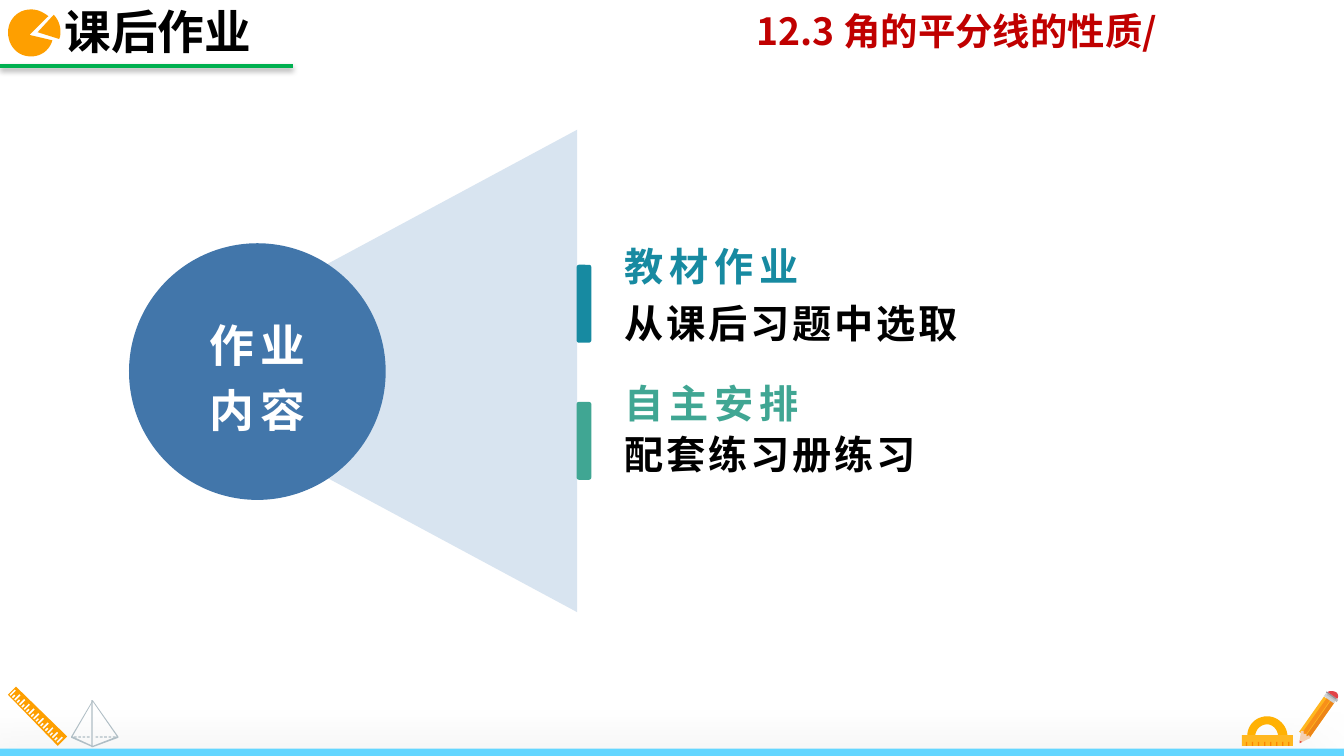
from dataclasses import dataclass

from lxml.etree import SubElement
from pptx import Presentation
from pptx.dml.color import RGBColor
from pptx.enum.shapes import MSO_CONNECTOR as CONN, MSO_SHAPE as SHAPE
from pptx.enum.text import MSO_ANCHOR as ANCHOR, MSO_AUTO_SIZE as AUTO, PP_ALIGN as ALIGN
from pptx.oxml.ns import qn
from pptx.util import Inches, Pt


@dataclass(frozen=True)
class Theme:
    sans: str = "Noto Sans CJK SC"
    serif: str = "Times New Roman"
    title_size: int = 25
    circle_size: int = 24
    item_size: int = 21
    header_size: int = 20
    black: str = "000000"
    white: str = "FFFFFF"
    red: str = "C00000"
    green: str = "00B050"
    sky: str = "63D6FF"
    blue: str = "4276AA"
    pale: str = "D8E4F0"
    teal: str = "178AA1"
    mint: str = "40A693"
    orange: str = "FE9F00"
    amber: str = "FFB720"
    arc: str = "FFB103"
    tick: str = "FB8501"
    grey: str = "B0BEC5"
    lead: str = "E74C3C"
    eraser: str = "E24348"
    wood: str = "F4CFB2"


T = Theme()


def paint(shape, color, rot=0):
    shape.fill.solid()
    shape.fill.fore_color.rgb = RGBColor.from_string(color)
    shape.line.fill.background()
    shape.shadow.inherit = False
    shape.rotation = rot
    return shape


def add_block(s, kind, x, y, w, h, color, rot=0):
    sp = s.shapes.add_shape(kind, Inches(x), Inches(y), Inches(w), Inches(h))
    return paint(sp, color, rot)


def flatten(contour, steps=12):
    """Turn 2-tuples (points) and 6-tuples (cubic curves) into EMU points."""
    points = []
    for seg in contour:
        if len(seg) == 2:
            points.append(seg)
            continue
        ctrl = [points[-1], seg[:2], seg[2:4], seg[4:]]
        for i in range(1, steps + 1):
            t = i / steps
            weights = ((1 - t) ** 3, 3 * t * (1 - t) ** 2, 3 * t * t * (1 - t), t ** 3)
            points.append(tuple(sum(k * c[a] for k, c in zip(weights, ctrl)) for a in (0, 1)))
    return [(Inches(x), Inches(y)) for x, y in points]


def add_outline(s, color, *contours):
    first, *others = [flatten(c) for c in contours]
    builder = s.shapes.build_freeform(*first[0], scale=1.0)
    builder.add_line_segments(first[1:], close=True)
    for points in others:
        builder.move_to(*points[0])
        builder.add_line_segments(points[1:], close=True)
    return paint(builder.convert_to_shape(), color)


def add_shadow(shape, alpha, blur, dist, angle):
    sp_pr = shape._element.spPr
    effects = sp_pr.find(qn("a:effectLst"))
    if effects is None:
        effects = SubElement(sp_pr, qn("a:effectLst"))
    outer = SubElement(effects, qn("a:outerShdw"), blurRad=str(Pt(blur)),
                       dist=str(Pt(dist)), dir=str(angle * 60000), rotWithShape="0")
    clr = SubElement(outer, qn("a:srgbClr"), val=T.black)
    SubElement(clr, qn("a:alpha"), val=str(alpha * 1000))


def add_run(p, text, size, color, font=T.sans, spacing=0):
    r = p.add_run()
    r.text = text
    r.font.name, r.font.size, r.font.bold = font, Pt(size), True
    r.font.color.rgb = RGBColor.from_string(color)
    r_pr = r._r.get_or_add_rPr()
    SubElement(r_pr, qn("a:ea"), typeface=T.sans)
    if spacing:
        r_pr.set("spc", str(int(spacing * 100)))


def set_frame(tf, anchor, insets, wrap=True):
    tf.word_wrap, tf.vertical_anchor = wrap, anchor
    tf.auto_size = AUTO.NONE if wrap else AUTO.SHAPE_TO_FIT_TEXT
    tf.margin_left, tf.margin_top, tf.margin_right, tf.margin_bottom = map(Inches, insets)


def add_text(s, x, y, w, h, text, size, color, anchor, insets, spacing=0, leading=1.0):
    tf = s.shapes.add_textbox(Inches(x), Inches(y), Inches(w), Inches(h)).text_frame
    set_frame(tf, anchor, insets)
    p = tf.paragraphs[0]
    p.line_spacing = leading
    add_run(p, text, size, color, spacing=spacing)


def add_protractor(s):
    add_outline(s, T.arc, [
        (9.34, 5.48), (9.34, 5.43, 9.38, 5.39, 9.43, 5.39), (9.47, 5.39, 9.51, 5.43, 9.51, 5.48),
        (9.58, 5.48), (9.58, 5.4, 9.51, 5.33, 9.43, 5.33), (9.34, 5.33, 9.28, 5.4, 9.28, 5.48)])
    add_block(s, SHAPE.RECTANGLE, 9.24, 5.47, 0.38, 0.08, T.amber)
    for i in range(8):
        add_block(s, SHAPE.RECTANGLE, 9.27 + 0.045 * i, 5.52, 0.01, 0.03, T.tick)


def add_pencil(s):
    parts = [(9.75, 5.18, 0.09, 0.32, T.amber), (9.81, 5.19, 0.03, 0.32, "ED8518"),
             (9.78, 5.17, 0.03, 0.32, "F89019"), (9.85, 5.18, 0.09, 0.03, "D1D3D4"),
             (9.87, 5.18, 0.09, 0.02, "BCBEC0"), (9.86, 5.17, 0.09, 0.01, "939598")]
    for x, y, w, h, color in parts:
        add_block(s, SHAPE.RECTANGLE, x, y, w, h, color, rot=35.2)
    add_outline(s, T.lead, [(9.67, 5.51), (9.67, 5.53), (9.69, 5.52), (9.68, 5.51)])
    add_outline(s, T.eraser, [(9.94, 5.15), (9.92, 5.14, 9.89, 5.14, 9.88, 5.15),
                              (9.95, 5.2), (9.96, 5.19, 9.96, 5.16, 9.94, 5.15)])
    add_outline(s, T.wood, [(9.67, 5.51), (9.69, 5.52), (9.75, 5.49), (9.74, 5.47),
                            (9.72, 5.48), (9.72, 5.46), (9.7, 5.46), (9.7, 5.44), (9.68, 5.44)])


def add_ruler(s):
    # Long and short notches alternate along the diagonal
    notches = []
    for i in range(21):
        x, y = 0.07 + 0.35 * i / 20, 5.17 + 0.35 * i / 20
        reach = 0.02 if i % 2 else 0.04
        notches.append([(x, y), (x + reach, y - reach),
                        (x + reach + 0.01, y - reach + 0.01), (x + 0.01, y + 0.01)])
    add_outline(s, T.orange, [(0.12, 5.11), (0.06, 5.17), (0.43, 5.55), (0.5, 5.48)], *notches)


def add_pyramid(s):
    for i in range(10):
        if i != 4:  # the vertical edge passes here
            add_block(s, SHAPE.RECTANGLE, 0.55 + 0.29 * i / 9, 5.48, 0.02, 0.01, T.grey)
    add_outline(s, T.grey,
                [(0.69, 5.21), (0.53, 5.48), (0.53, 5.49), (0.69, 5.56), (0.88, 5.49), (0.88, 5.48)],
                [(0.87, 5.48), (0.69, 5.55), (0.54, 5.48), (0.69, 5.22)])
    add_block(s, SHAPE.RECTANGLE, 0.68, 5.21, 0.01, 0.35, T.grey)


def add_title(s, text):
    sp = s.shapes.title
    sp.left, sp.top, sp.width, sp.height = map(Inches, (0.38, -0.03, 1.6, 0.52))
    set_frame(sp.text_frame, ANCHOR.TOP, (0.1, 0.05, 0.1, 0.05), wrap=False)
    p = sp.text_frame.paragraphs[0]
    p.alignment = ALIGN.LEFT
    add_run(p, text, T.title_size, T.black, font=T.serif)

    # Green rule and pie icon
    rule = s.shapes.add_connector(CONN.STRAIGHT, 0, Inches(0.49), Inches(2.18), Inches(0.49))
    rule.line.color.rgb = RGBColor.from_string(T.green)
    rule.line.width = Pt(2)
    add_shadow(rule, 38, 3.1, 1.6, 90)
    add_outline(s, T.orange,
                [(0.36, 0.12), (0.32, 0.09, 0.28, 0.07, 0.23, 0.07),
                 (0.13, 0.07, 0.06, 0.15, 0.06, 0.24), (0.06, 0.34, 0.13, 0.42, 0.23, 0.42),
                 (0.31, 0.42, 0.37, 0.37, 0.39, 0.3), (0.22, 0.26)],
                [(0.4, 0.11), (0.28, 0.24), (0.44, 0.29), (0.45, 0.27, 0.45, 0.25, 0.45, 0.23),
                 (0.45, 0.19, 0.43, 0.14, 0.4, 0.11)])


def add_topic(s, lines):
    add_block(s, SHAPE.ISOSCELES_TRIANGLE, 0.83, 1.09, 3.59, 3.34, T.pale, rot=270)
    tf = add_block(s, SHAPE.OVAL, 0.96, 1.81, 1.91, 1.91, T.blue).text_frame
    set_frame(tf, ANCHOR.MIDDLE, (0.07,) * 4)
    for i, line in enumerate(lines):
        p = tf.add_paragraph() if i else tf.paragraphs[0]
        p.alignment, p.line_spacing = ALIGN.CENTER, 1.2
        add_run(p, line, T.circle_size, T.white, spacing=3)


def add_item(s, head_y, body_y, bar_y, head, body, color):
    add_block(s, SHAPE.ROUNDED_RECTANGLE, 4.29, bar_y, 0.11, 0.58, color)
    add_text(s, 4.58, head_y, 1.69, 0.34, head, T.item_size, color, ANCHOR.BOTTOM,
             (0.07, 0.07, 0.07, 0), spacing=3, leading=1.2)
    add_text(s, 4.58, body_y, 4, 0.41, body, T.item_size, T.black, ANCHOR.MIDDLE,
             (0.07, 0, 0.07, 0.04), spacing=1.5, leading=1.2)


def main():
    prs = Presentation()
    prs.slide_width, prs.slide_height = Inches(10), Inches(10) * 9 // 16
    s = prs.slides.add_slide(prs.slide_layouts[5])

    # Bottom strip and stationery
    strip = add_block(s, SHAPE.RECTANGLE, 0, 5.57, 10, 0.06, T.sky)
    add_shadow(strip, 50, 35, 20, 135)
    add_protractor(s)
    add_pencil(s)
    add_ruler(s)
    add_pyramid(s)

    # Header
    add_text(s, 5.53, 0.01, 3.35, 0.44, "12.3 角的平分线的性质/", T.header_size, T.red,
             ANCHOR.TOP, (0.1, 0.05, 0, 0.05))
    add_title(s, "课后作业")

    # Homework
    add_topic(s, ["作业", "内容"])
    add_item(s, 1.81, 2.18, 1.97, "教材作业", "从课后习题中选取", T.teal)
    add_item(s, 2.83, 3.16, 2.99, "自主安排", "配套练习册练习", T.mint)

    prs.save("out.pptx")


if __name__ == "__main__":
    main()
